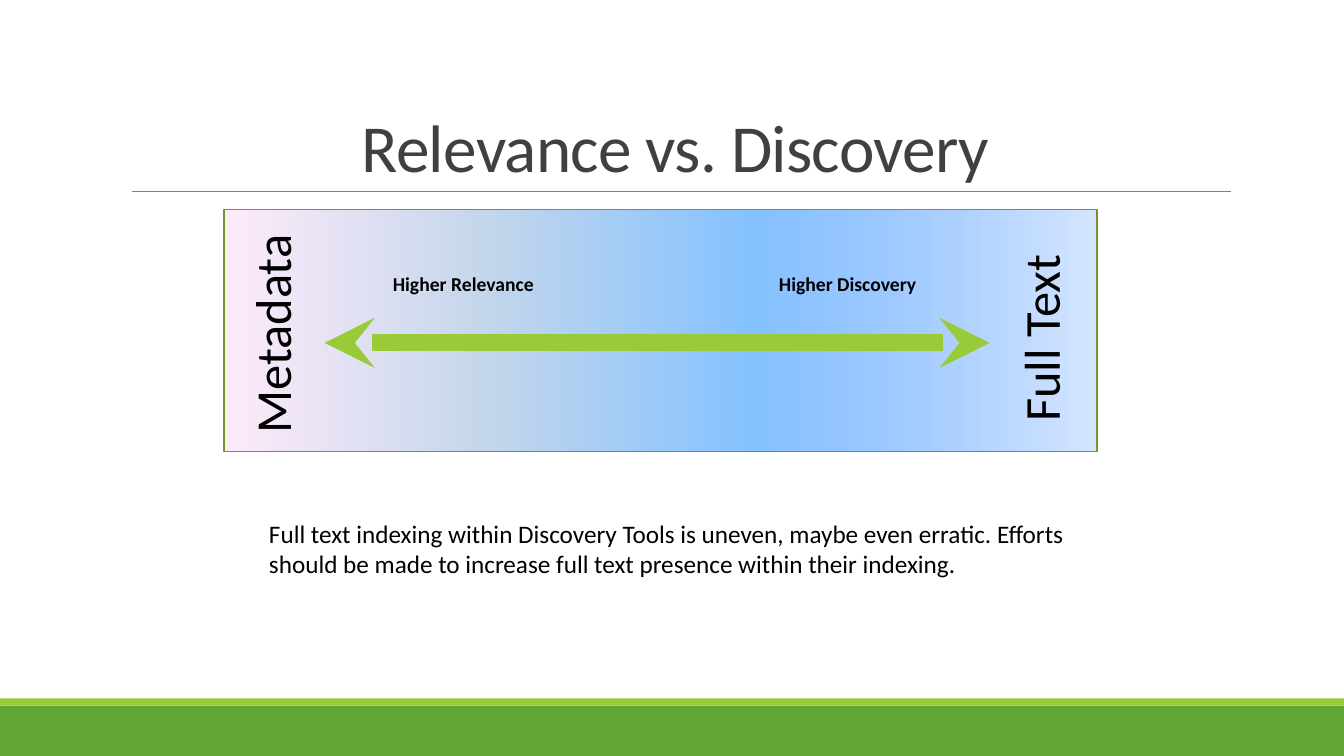
from dataclasses import dataclass

from lxml import etree
from pptx import Presentation
from pptx import util as u
from pptx.dml.color import RGBColor
from pptx.enum import shapes, text
from pptx.oxml.ns import qn


@dataclass(frozen=True)
class Theme:
    font: str = "Calibri"
    title: str = "404040"
    ink: str = "000000"
    rule: str = "808080"
    green: str = "63A537"
    lime: str = "99CB38"
    border: str = "719629"
    spectrum: tuple = (
        (0, "5E9EFF", 25), (40, "85C2FF", 100),
        (70, "C4D6EB", 100), (100, "FFEBFA", 100),
    )
    title_size: int = 48
    end_size: int = 36
    body_size: int = 18
    label_size: int = 14


class Deck:
    def __init__(self, theme):
        self.t = theme
        self.prs = Presentation()
        self.prs.slide_width, self.prs.slide_height = u.Cm(33.87), u.Cm(19.05)
        self.s = self.prs.slides.add_slide(self.prs.slide_layouts[5])

    def add_words(self, tf, words, size, color, align, bold=False):
        tf.word_wrap = True
        p = tf.paragraphs[0]
        p.alignment = align
        r = p.add_run()
        r.text = words
        r.font.name, r.font.size, r.font.bold = self.t.font, u.Pt(size), bold
        r.font.color.rgb = RGBColor.from_string(color)
        return p, r

    def title(self, words, *box):
        sp = self.s.shapes.title
        sp.left, sp.top, sp.width, sp.height = map(u.Cm, box)
        tf = sp.text_frame
        tf.auto_size = text.MSO_AUTO_SIZE.NONE
        tf.vertical_anchor = text.MSO_ANCHOR.BOTTOM
        p, r = self.add_words(
            tf, words, self.t.title_size, self.t.title, text.PP_ALIGN.CENTER)
        p.line_spacing = 0.85
        r.font._element.set("spc", "-50")

    def rect(self, *box):
        sp = self.s.shapes.add_shape(shapes.MSO_SHAPE.RECTANGLE, *map(u.Cm, box))
        sp.shadow.inherit = False
        return sp

    def bar(self, color, *box):
        sp = self.rect(*box)
        sp.fill.solid()
        sp.fill.fore_color.rgb = RGBColor.from_string(color)
        sp.line.fill.background()

    def spectrum(self, *box):
        sp = self.rect(*box)
        sp.line.color.rgb = RGBColor.from_string(self.t.border)
        sp.line.width = u.Pt(1.25)
        sp.fill.gradient()
        sp.fill.gradient_angle = 180
        stops = sp._element.spPr.find(qn("a:gradFill")).find(qn("a:gsLst"))
        for gs in list(stops):
            stops.remove(gs)
        for pos, color, opacity in self.t.spectrum:
            gs = etree.SubElement(stops, qn("a:gs"), pos=str(pos * 1000))
            clr = etree.SubElement(gs, qn("a:srgbClr"), val=color)
            if opacity < 100:
                etree.SubElement(clr, qn("a:alpha"), val=str(opacity * 1000))

    def text(self, words, size, *box, align=text.PP_ALIGN.LEFT, bold=False, rotation=0):
        sp = self.s.shapes.add_textbox(*map(u.Cm, box))
        sp.rotation = rotation
        sp.text_frame.auto_size = text.MSO_AUTO_SIZE.SHAPE_TO_FIT_TEXT
        self.add_words(sp.text_frame, words, size, self.t.ink, align, bold)

    def line(self, color, width, x1, x2, y, arrows=False):
        sp = self.s.shapes.add_connector(
            shapes.MSO_CONNECTOR.STRAIGHT, u.Cm(x1), u.Cm(y), u.Cm(x2), u.Cm(y))
        sp.line.color.rgb = RGBColor.from_string(color)
        sp.line.width = u.Pt(width)
        spPr = sp._element.spPr
        if arrows:
            ln = spPr.find(qn("a:ln"))
            for end in ("a:headEnd", "a:tailEnd"):
                etree.SubElement(ln, qn(end), type="stealth")
        etree.SubElement(spPr, qn("a:effectLst"))


def main():
    t = Theme()
    d = Deck(t)
    d.bar(t.green, 0, 17.78, 33.87, 1.27)
    d.bar(t.lime, 0, 17.6, 33.87, 0.18)
    d.line(t.rule, 0.5, 3.33, 31.01, 4.83)
    d.spectrum(5.64, 5.28, 22, 6.1)
    d.title("Relevance vs. Discovery", 3.05, 0.79, 27.94, 4.04)
    for words, x, y, w in (("Metadata", 3.02, 7.52, 7.65), ("Full Text", 23.14, 7.62, 6.15)):
        d.text(words, t.end_size, x, y, w, 1.8, align=text.PP_ALIGN.CENTER, rotation=270)
    for words, x in (("Higher Relevance", 9.65), ("Higher Discovery", 19.38)):
        d.text(words, t.label_size, x, 6.73, 4.45, 0.84, bold=True)
    d.line(t.lime, 12, 8.18, 24.94, 8.64, arrows=True)
    d.text("Full text indexing within Discovery Tools is uneven, maybe even erratic. "
           "Efforts should be made to increase full text presence within their indexing.",
           t.body_size, 6.53, 12.93, 21.08, 1.8)
    d.prs.save("out.pptx")


if __name__ == "__main__":
    main()
